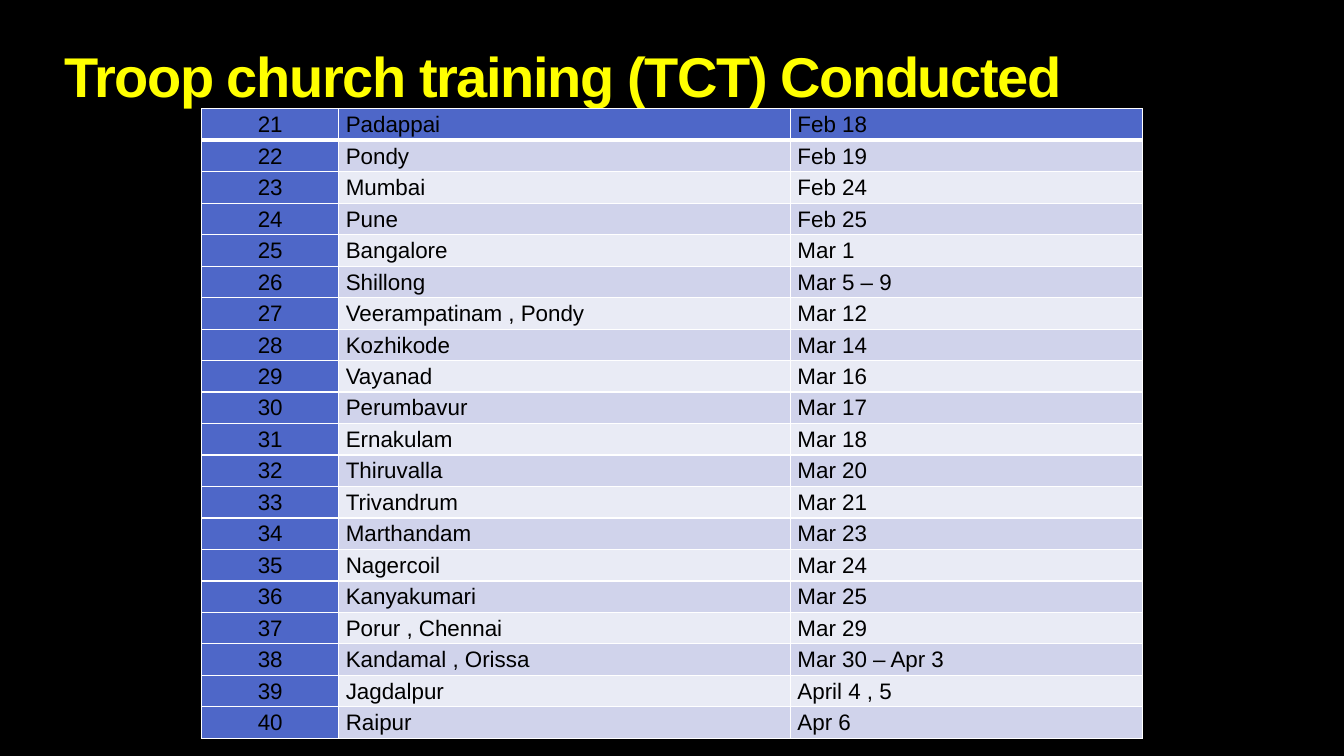
from lxml import etree
from pptx import Presentation
from pptx.dml.color import RGBColor
from pptx.enum.text import MSO_ANCHOR, PP_ALIGN
from pptx.oxml.ns import qn
from pptx.util import Inches, Pt

CENTER, LEFT, TOP = PP_ALIGN.CENTER, PP_ALIGN.LEFT, MSO_ANCHOR.TOP

# Content
TITLE = "Troop church training (TCT) Conducted"
FIRST_NUMBER = 21
TRAININGS = [
    ("Padappai", "Feb 18"),
    ("Pondy", "Feb 19"),
    ("Mumbai", "Feb 24"),
    ("Pune", "Feb 25"),
    ("Bangalore", "Mar 1"),
    ("Shillong", "Mar 5 – 9"),
    ("Veerampatinam , Pondy", "Mar 12"),
    ("Kozhikode", "Mar 14"),
    ("Vayanad", "Mar 16"),
    ("Perumbavur", "Mar 17"),
    ("Ernakulam", "Mar 18"),
    ("Thiruvalla", "Mar 20"),
    ("Trivandrum", "Mar 21"),
    ("Marthandam", "Mar 23"),
    ("Nagercoil", "Mar 24"),
    ("Kanyakumari", "Mar 25"),
    ("Porur , Chennai", "Mar 29"),
    ("Kandamal , Orissa", "Mar 30 – Apr 3"),
    ("Jagdalpur", "April 4 , 5"),
    ("Raipur", "Apr 6"),
]
COLORS = {
    "background": "000000",
    "title": "FFFF00",
    "text": "000000",
    "accent": "4E67C8",
    "dark band": "D0D3EB",
    "light band": "E9EBF5",
    "border": "FFFFFF",
}
FONT = "Arial"
COLUMN_WIDTHS = [1.36, 4.48, 3.49]
TABLE_LEFT, TABLE_TOP, TABLE_HEIGHT = 2, 1.08, 6.25


def style_font(font, size, color, bold=False):
    font.name, font.size, font.bold = FONT, Pt(size), bold
    font.color.rgb = RGBColor.from_string(COLORS[color])


def add_borders(cell, bottom_width):
    properties = cell._tc.get_or_add_tcPr()
    widths = {"a:lnL": 1, "a:lnR": 1, "a:lnT": 1, "a:lnB": bottom_width}
    for position, (side, width) in enumerate(widths.items()):
        line = etree.Element(qn(side), w=str(Pt(width)))
        fill = etree.SubElement(line, qn("a:solidFill"))
        etree.SubElement(fill, qn("a:srgbClr"), val=COLORS["border"])
        properties.insert(position, line)


def fill_name(row, column):
    if row == 0 or column == 0:
        return "accent"
    return "dark band" if row % 2 else "light band"


prs = Presentation()
prs.slide_width, prs.slide_height = Inches(13.33), Inches(7.5)
slide = prs.slides.add_slide(prs.slide_layouts[6])
slide.background.fill.solid()
slide.background.fill.fore_color.rgb = RGBColor.from_string(COLORS["background"])

# Title
title = slide.shapes.add_textbox(Inches(0.54), Inches(0.3), Inches(11.63), Inches(0.7))
title_frame = title.text_frame
title_frame.word_wrap = True
title_frame.vertical_anchor = TOP
title_frame.margin_top, title_frame.margin_bottom = Inches(0.11), 0
title_frame.text = TITLE
title_run = title_frame.paragraphs[0].runs[0]
style_font(title_run.font, 40, "title", bold=True)
title_run.font._element.set("spc", "-100")

# Training schedule
schedule = slide.shapes.add_table(
    len(TRAININGS), len(COLUMN_WIDTHS), Inches(TABLE_LEFT), Inches(TABLE_TOP),
    Inches(sum(COLUMN_WIDTHS)), Inches(TABLE_HEIGHT)).table
schedule.first_row = schedule.horz_banding = False
for column, width in zip(schedule.columns, COLUMN_WIDTHS):
    column.width = Inches(width)
for table_row in schedule.rows:
    table_row.height = Inches(TABLE_HEIGHT / len(TRAININGS))

for row, (place, date) in enumerate(TRAININGS):
    for column, text in enumerate((str(FIRST_NUMBER + row), place, date)):
        cell = schedule.cell(row, column)
        cell.margin_left = cell.margin_right = Inches(0.07)
        cell.margin_top = cell.margin_bottom = 0
        cell.fill.solid()
        cell.fill.fore_color.rgb = RGBColor.from_string(COLORS[fill_name(row, column)])
        add_borders(cell, bottom_width=3 if row == 0 else 1)
        cell.text_frame.text = text
        paragraph = cell.text_frame.paragraphs[0]
        paragraph.alignment = CENTER if column == 0 else LEFT
        paragraph.line_spacing = 1.15
        style_font(paragraph.runs[0].font, 16, "text")

prs.save("out.pptx")
